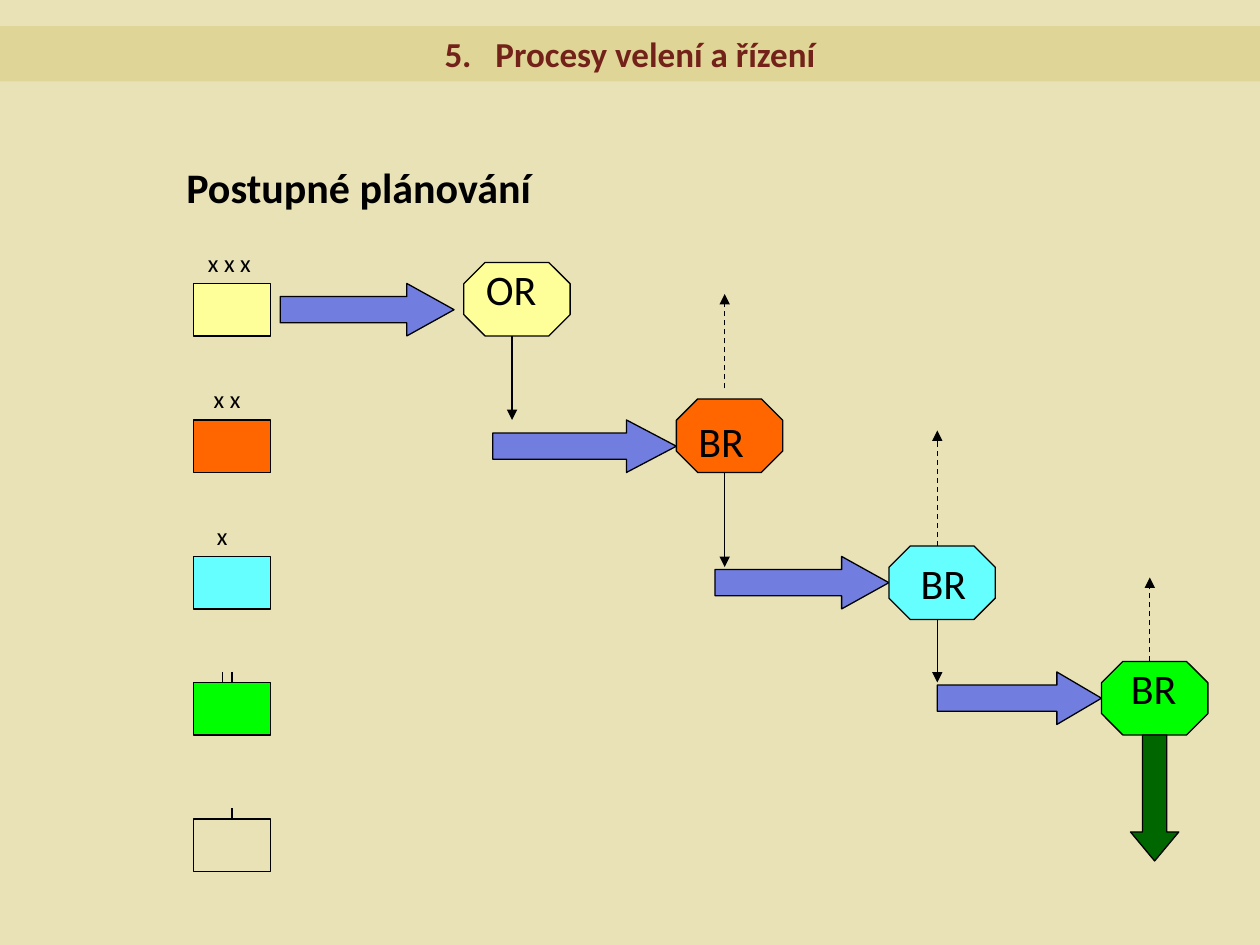
"""Build the slide on successive planning across command levels."""
from dataclasses import dataclass

from lxml.etree import SubElement
from pptx import Presentation
from pptx.dml.color import RGBColor
from pptx.enum.dml import MSO_LINE
from pptx.enum.shapes import MSO_CONNECTOR, MSO_SHAPE
from pptx.enum.text import MSO_ANCHOR, PP_ALIGN
from pptx.oxml.ns import qn
from pptx.util import Inches, Pt


@dataclass(frozen=True)
class Theme:
    font: str = "Calibri"
    back: str = "E9E2B6"
    band: str = "DFD596"
    title: str = "722219"
    ink: str = "000000"
    arrow: str = "727DE0"
    final: str = "006600"
    title_size: int = 20
    large: int = 24
    small: int = 14
    line: float = 0.75


T = Theme()
TITLE = ("5.", "Procesy velení a řízení")
HEADING = ("Postupné plánování", 18, 14.75)
COLUMNS, ROWS = 130.4, 90
UNIT_LEFT, UNIT_W, UNIT_H = 20, 8, 5
STEP_LEFT, STEP_PITCH, STEP_W, STEP_H = 48, 22, 11, 7
FLOW_OFFSET = 5

UNITS = [
    {"row": 27, "fill": "FFFF99", "mark": "x x x", "center": 23.75},
    {"row": 40, "fill": "FF6600", "mark": "x x", "center": 23.5},
    {"row": 53, "fill": "66FFFF", "mark": "x", "center": 23},
    {"row": 65, "fill": "00FF00", "ticks": (23, 24)},
    {"row": 78, "fill": None, "ticks": (24,)},
]
STEPS = [
    {"row": 25, "label": "OR", "at": (49, 24.5), "arrow": (29, 27, 18), "down": 40},
    {"row": 38, "label": "BR", "at": (71, 39), "arrow": (51, 40, 19), "up": (37, 28), "down": 54},
    {"row": 52, "label": "BR", "at": (94, 52.5), "arrow": (74, 53, 18), "up": (52, 41), "down": 65},
    {"row": 63, "label": "BR", "at": (115.75, 62.5), "arrow": (97, 64, 17), "up": (63, 55)},
]
FINAL_ARROW = (117, 70, 5, 12)

prs = Presentation()
prs.slide_width, prs.slide_height = Inches(10), Inches(7.5)
s = prs.slides.add_slide(prs.slide_layouts[5])


def color(value):
    return RGBColor.from_string(value)


def x(col):
    return round(col * prs.slide_width / COLUMNS)


def y(row):
    return round(row * prs.slide_height / ROWS)


def style(p, size, ink=T.ink, bold=False):
    p.font.name, p.font.size, p.font.bold = T.font, Pt(size), bold
    p.font.color.rgb = color(ink)


def add_text(text, col, row, w, h, size, bold=False, align=PP_ALIGN.LEFT):
    tf = s.shapes.add_textbox(x(col), y(row), x(w), y(h)).text_frame
    tf.word_wrap = True
    p = tf.paragraphs[0]
    p.text, p.alignment = text, align
    style(p, size, bold=bold)


def add_shape(kind, col, row, w, h, fill, adjustments=()):
    sp = s.shapes.add_shape(kind, x(col), y(row), x(w), y(h))
    sp.shadow.inherit = False
    for i, value in enumerate(adjustments):
        sp.adjustments[i] = value
    if fill:
        sp.fill.solid()
        sp.fill.fore_color.rgb = color(fill)
    else:
        sp.fill.background()
    sp.line.color.rgb, sp.line.width = color(T.ink), Pt(T.line)


def add_line(col, start, end, head=True, dashed=False):
    c = s.shapes.add_connector(MSO_CONNECTOR.STRAIGHT, x(col), y(start), x(col), y(end))
    c.line.color.rgb, c.line.width = color(T.ink), Pt(T.line)
    if dashed:
        c.line.dash_style = MSO_LINE.DASH
    if head:
        SubElement(c.line._get_or_add_ln(), qn("a:tailEnd"), type="triangle")
    SubElement(c._element.spPr, qn("a:effectLst"))


def add_title():
    sp = s.shapes.title
    sp.left, sp.top, sp.width, sp.height = 0, y(2.5), prs.slide_width, y(5.25)
    sp.fill.solid()
    sp.fill.fore_color.rgb = color(T.band)
    tf = sp.text_frame
    tf.vertical_anchor = MSO_ANCHOR.MIDDLE
    p = tf.paragraphs[0]
    p.alignment = PP_ALIGN.CENTER
    for text in (TITLE[0], " ", TITLE[1]):
        r = p.add_run()
        r.text = text
        if text == " ":
            r._r.get_or_add_rPr().set("spc", "900")
    style(p, T.title_size, T.title, True)


def add_unit(unit):
    row = unit["row"]
    add_shape(MSO_SHAPE.RECTANGLE, UNIT_LEFT, row, UNIT_W, UNIT_H, unit["fill"])
    if "mark" in unit:
        add_text(unit["mark"], unit["center"] - UNIT_W / 2, row - 4, UNIT_W, 4,
                 T.small, align=PP_ALIGN.CENTER)
    for col in unit.get("ticks", ()):
        add_line(col, row - 1, row, head=False)


def add_step(i, step, fill):
    left = STEP_LEFT + i * STEP_PITCH
    col, row, length = step["arrow"]
    add_shape(MSO_SHAPE.RIGHT_ARROW, col, row, length, UNIT_H, T.arrow, (0.5, length / 20))
    add_shape(MSO_SHAPE.OCTAGON, left, step["row"], STEP_W, STEP_H, fill, (0.29,))
    add_text(step["label"], *step["at"], 10, 6, T.large)
    if "up" in step:
        add_line(left + FLOW_OFFSET, *step["up"], dashed=True)
    if "down" in step:
        add_line(left + FLOW_OFFSET, step["row"] + STEP_H, step["down"])


s.background.fill.solid()
s.background.fill.fore_color.rgb = color(T.back)
add_title()
add_text(*HEADING, 45, 6, T.large, bold=True)
for unit in UNITS:
    add_unit(unit)
for i, (step, unit) in enumerate(zip(STEPS, UNITS)):
    add_step(i, step, unit["fill"])
add_shape(MSO_SHAPE.DOWN_ARROW, *FINAL_ARROW, T.final, (0.5, 0.6))
prs.save("out.pptx")
